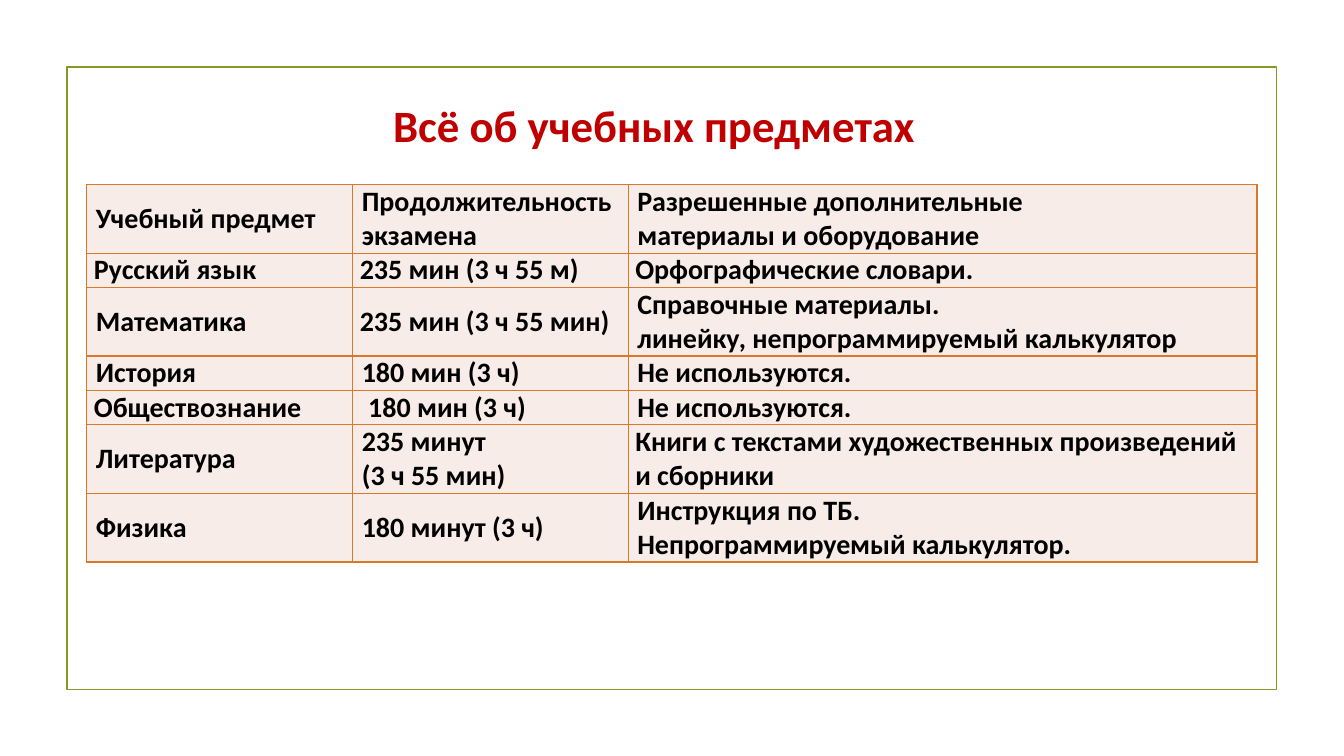
from lxml import etree
from pptx import Presentation
from pptx.dml.color import RGBColor
from pptx.enum.shapes import MSO_SHAPE
from pptx.enum.text import MSO_ANCHOR, PP_ALIGN
from pptx.oxml.ns import qn
from pptx.util import Pt

RECTANGLE = MSO_SHAPE.RECTANGLE
MIDDLE, TOP = MSO_ANCHOR.MIDDLE, MSO_ANCHOR.TOP
CENTER = PP_ALIGN.CENTER

OLIVE = RGBColor(0x83, 0x99, 0x2A)
ORANGE = RGBColor(0xD9, 0x78, 0x28)
BLUSH = RGBColor(0xF8, 0xEC, 0xE8)
RED = RGBColor(0xC0, 0x00, 0x00)
BLACK = RGBColor(0x00, 0x00, 0x00)

SUBJECTS = [
    ("Учебный предмет", "Продолжительность\nэкзамена",
     "Разрешенные дополнительные\nматериалы и оборудование"),
    ("Русский язык", "235 мин (3 ч 55 м)", "Орфографические словари."),
    ("Математика", "235 мин (3 ч 55 мин)",
     "Справочные материалы.\nлинейку, непрограммируемый калькулятор"),
    ("История", "180 мин (3 ч)", "Не используются."),
    ("Обществознание", " 180 мин (3 ч)", "Не используются."),
    ("Литература", "235 минут\n(3 ч 55 мин)",
     "Книги с текстами художественных произведений и сборники"),
    ("Физика", "180 минут (3 ч)",
     "Инструкция по ТБ.\nНепрограммируемый калькулятор."),
]
COLUMN_WIDTHS = (190, 196.8, 449.2)
ROW_LINES = (2, 1, 2, 1, 1, 2, 2)
LINE_HEIGHT = 23
USUAL_INDENT = 1.44
SPECIAL_INDENTS = {(1, 0): 0, (1, 1): 0, (1, 2): 0, (2, 1): 0,
                   (4, 0): -2.88, (5, 2): 0}
TOP_CELLS = {(5, 2)}


class SubjectSlide:
    """Draws the framed subject slide in one shared style."""

    font_name = "Calibri"

    def __init__(self, deck):
        self.slide = deck.slides.add_slide(deck.slide_layouts[6])

    def style(self, paragraph, size, color):
        font = paragraph.font
        font.name, font.size, font.bold = self.font_name, Pt(size), True
        font.color.rgb = color

    def frame(self, left, top, width, height):
        border = self.slide.shapes.add_shape(
            RECTANGLE, Pt(left), Pt(top), Pt(width), Pt(height))
        border.shadow.inherit = False
        border.fill.background()
        border.line.color.rgb = OLIVE
        border.line.width = Pt(1.25)

    def title(self, text, left, top, width, height):
        heading = self.slide.shapes.add_textbox(
            Pt(left), Pt(top), Pt(width), Pt(height)).text_frame
        heading.word_wrap = True
        heading.text = text
        heading.paragraphs[0].alignment = CENTER
        self.style(heading.paragraphs[0], 32, RED)

    def table(self, rows, left, top):
        subjects = self.slide.shapes.add_table(
            len(rows), len(COLUMN_WIDTHS), Pt(left), Pt(top),
            Pt(sum(COLUMN_WIDTHS)), Pt(sum(ROW_LINES) * LINE_HEIGHT)).table
        for column, width in zip(subjects.columns, COLUMN_WIDTHS):
            column.width = Pt(width)
        for row, lines in zip(subjects.rows, ROW_LINES):
            row.height = Pt(lines * LINE_HEIGHT)
        for r, texts in enumerate(rows):
            for c, text in enumerate(texts):
                self.cell(subjects.cell(r, c), text,
                          SPECIAL_INDENTS.get((r, c), USUAL_INDENT),
                          TOP if (r, c) in TOP_CELLS else MIDDLE)

    def cell(self, cell, text, indent, anchor):
        cell.text = text
        cell.vertical_anchor = anchor
        cell.margin_left = cell.margin_right = Pt(5.04)
        cell.margin_top = cell.margin_bottom = 0
        for paragraph in cell.text_frame.paragraphs:
            properties = paragraph._p.get_or_add_pPr()
            properties.set("marL", "0")
            properties.set("indent", str(Pt(indent)))
            self.style(paragraph, 20, BLACK)
        self.borders(cell)
        cell.fill.solid()
        cell.fill.fore_color.rgb = BLUSH

    def borders(self, cell):
        properties = cell._tc.get_or_add_tcPr()
        for side in ("a:lnL", "a:lnR", "a:lnT", "a:lnB"):
            line = etree.SubElement(properties, qn(side), w=str(Pt(1)))
            fill = etree.SubElement(line, qn("a:solidFill"))
            etree.SubElement(fill, qn("a:srgbClr"), val=str(ORANGE))


def main():
    deck = Presentation()
    deck.slide_width, deck.slide_height = Pt(960), Pt(540)
    page = SubjectSlide(deck)
    page.frame(47.8, 48, 864, 444.5)
    page.table(SUBJECTS, 62, 131.8)
    page.title("Всё об учебных предметах", 62.6, 66.2, 809.3, 46)
    deck.save("out.pptx")


if __name__ == "__main__":
    main()
